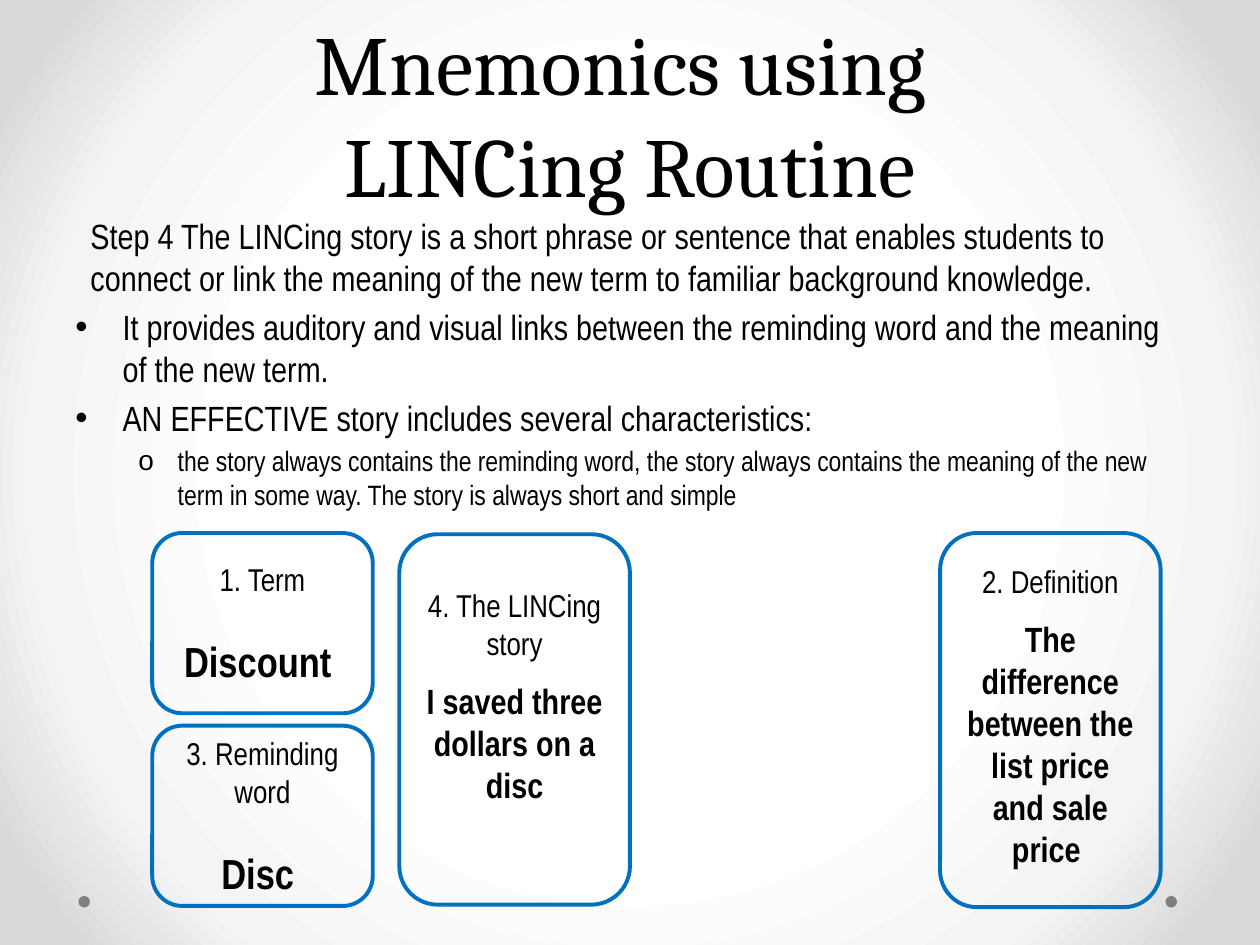
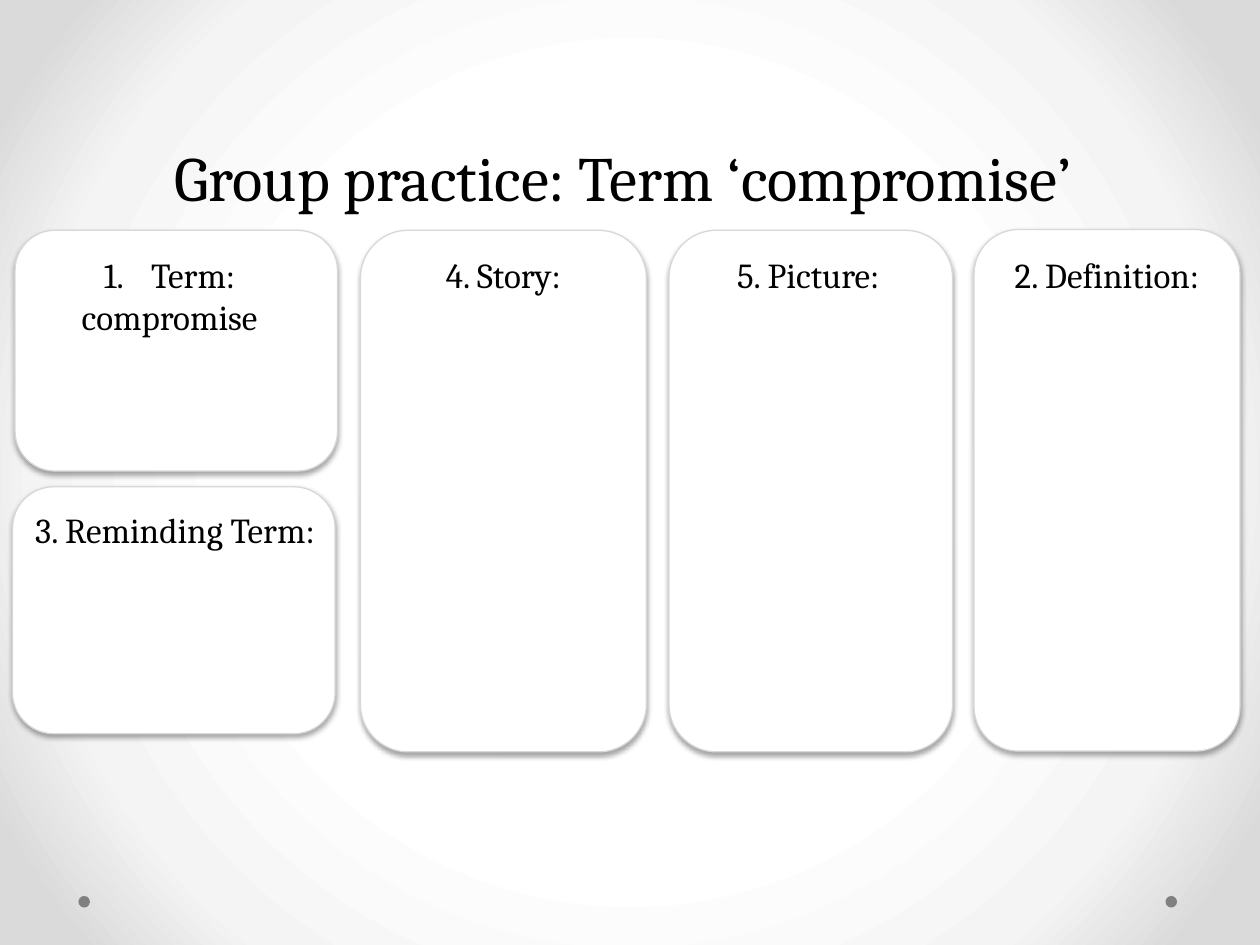
from lxml import etree
from pptx import Presentation
from pptx.dml.color import RGBColor
from pptx.enum import shapes, text
from pptx.oxml import parse_xml
from pptx.oxml.ns import nsdecls, qn
from pptx.util import Pt

# ---- Shared look ----
BLACK = RGBColor(0x00, 0x00, 0x00)
WHITE = RGBColor(0xFF, 0xFF, 0xFF)
BLUE = RGBColor(0x00, 0x70, 0xC0)
PALE = RGBColor(0xD8, 0xD8, 0xD8)
GREY = RGBColor(0x80, 0x80, 0x80)
GLOW = [(50, "FFFFFF"), (76, "F4F4F4"), (92, "DADADA")]
SERIF, NARROW = "Cambria", "Arial Narrow"
DOT = 6.6
DOT_TOP = 512
DOT_LEFTS = (666, 44.8)
TITLE_BOX = (36, 0, 648, 126)

# ---- Slide 1 content ----
ROUTINE_TITLE = ("Mnemonics using \vLINCing Routine", 48)
STORY_BOX = (36, 118.8, 648, 260)
# (text, size, bullet, left margin, hanging indent)
STORY_POINTS = [
    ("Step 4 The LINCing story is a short phrase or sentence that enables students to "
     "connect or link the meaning of the new term to familiar background knowledge.",
     20, None, 8.64, 0),
    ("It provides auditory and visual links between the reminding word and the meaning "
     "of the new term.", 20, "•", 27, -27),
    ("AN EFFECTIVE story includes several characteristics:", 20, "•", 27, -27),
    ("the story always contains the reminding word, the story always contains the meaning "
     "of the new term in some way. The story is always short and simple",
     16, "o", 58.5, -22.5),
]
# (label, example, example size, gap, top inset or None for centred, box)
LINC_CARDS = [
    ("1. Term", "Discount ", 24, 21.7, None, (87, 304.6, 126, 103)),
    ("3. Reminding word", "Disc ", 24, 21.7, None, (87, 414.7, 126, 103)),
    ("2. Definition", "The difference between the list price and sale price ",
     20, 10, 10.4, (537.2, 304.6, 126, 213.8)),
    ("4. The LINCing story", "I saved three dollars on a disc",
     20, 10, 23.4, (228.2, 305.3, 131.8, 211.7)),
]

# ---- Slide 2 content ----
PRACTICE_TITLE = ("Group practice: Term ‘compromise’ ", 36)
# (lines, first line numbered, card box, label box)
PRACTICE_CARDS = [
    (["Term:", "compromise"], True, (8.6, 131.6, 184.3, 137.6), (20.2, 141.1, 153.4, 108)),
    (["3. Reminding Term:"], False, (7.2, 278.2, 184.3, 141.1), (8.6, 287.3, 182.9, 94)),
    (["4. Story:"], False, (206, 131.6, 163.4, 298), (206, 141.1, 163.4, 84)),
    (["5. Picture:"], False, (382.3, 131.6, 162, 298), (394.6, 141.1, 134.6, 32)),
    (["2. Definition:"], False, (556.6, 131.2, 152, 298), (556.6, 141.1, 152, 66)),
]


# ---- Helpers ----
def points(box):
    return [Pt(value) for value in box]


def style(paragraph, font, size, bold=False, align=text.PP_ALIGN.CENTER):
    paragraph.alignment = align
    for run in paragraph.runs:
        run.font.name, run.font.size, run.font.bold = font, Pt(size), bold
        run.font.color.rgb = BLACK


def hang(paragraph, margin, indent, bullet=None, numbered=False):
    props = paragraph._p.get_or_add_pPr()
    props.set("marL", str(Pt(margin)))
    props.set("indent", str(Pt(indent)))
    if bullet:
        etree.SubElement(props, qn("a:buFont"), typeface="Arial")
        etree.SubElement(props, qn("a:buChar"), char=bullet)
    elif numbered:
        etree.SubElement(props, qn("a:buAutoNum"), type="arabicPeriod")


def add_preset(slide, kind, box, fill=None, line=None, width=0.75):
    shape = slide.shapes.add_shape(kind, *points(box))
    shape.shadow.inherit = False
    if fill is None:
        shape.fill.background()
    else:
        shape.fill.solid()
        shape.fill.fore_color.rgb = fill
    if line is None:
        shape.line.fill.background()
    else:
        shape.line.color.rgb = line
        shape.line.width = Pt(width)
    return shape


def add_frame(slide, box, lines):
    frame = slide.shapes.add_textbox(*points(box)).text_frame
    frame.word_wrap = True
    frame.text = "\n".join(lines)
    return frame


def cast_shadow(card):
    effects = card._element.spPr.find(qn("a:effectLst"))
    effects.append(parse_xml(
        f'<a:outerShdw {nsdecls("a")} blurRad="{Pt(3.1)}" dist="{Pt(1.8)}" dir="5400000" '
        'rotWithShape="0"><a:srgbClr val="000000"><a:alpha val="35000"/></a:srgbClr>'
        '</a:outerShdw>'))


def paint_background(master):
    master.background.fill.gradient()
    gradient = master.element.find(".//" + qn("a:gradFill"))
    stops = "".join(f'<a:gs pos="{pos * 1000}"><a:srgbClr val="{colour}"/></a:gs>'
                    for pos, colour in GLOW)
    gradient.getparent().replace(gradient, parse_xml(
        f'<a:gradFill {nsdecls("a")} rotWithShape="1"><a:gsLst>{stops}</a:gsLst>'
        '<a:path path="circle"><a:fillToRect l="50000" t="50000" r="50000" b="50000"/>'
        '</a:path></a:gradFill>'))


def new_slide(prs, title, size):
    slide = prs.slides.add_slide(prs.slide_layouts[6])
    for left in DOT_LEFTS:
        add_preset(slide, shapes.MSO_SHAPE.OVAL, (left, DOT_TOP, DOT, DOT), GREY)
    frame = add_frame(slide, TITLE_BOX, [])
    frame.vertical_anchor = text.MSO_ANCHOR.BOTTOM
    heading = frame.paragraphs[0]
    heading.text = title
    heading.line_spacing = Pt(58)
    style(heading, SERIF, size)
    return slide


# ---- Slides ----
def build_routine(prs):
    slide = new_slide(prs, *ROUTINE_TITLE)
    story = add_frame(slide, STORY_BOX, [point[0] for point in STORY_POINTS])
    for paragraph, (_, size, bullet, margin, indent) in zip(story.paragraphs, STORY_POINTS):
        style(paragraph, NARROW, size, align=text.PP_ALIGN.LEFT)
        paragraph.space_before = Pt(size * 0.2)
        hang(paragraph, margin, indent, bullet)
    story.paragraphs[0].space_before = Pt(0)

    for label, example, size, gap, inset, box in LINC_CARDS:
        card = add_preset(slide, shapes.MSO_SHAPE.ROUNDED_RECTANGLE, box, line=BLUE, width=2.25)
        frame = card.text_frame
        frame.word_wrap = True
        frame.text = f"{label}\n{example}"
        frame.vertical_anchor = text.MSO_ANCHOR.MIDDLE
        if inset is not None:
            frame.vertical_anchor = text.MSO_ANCHOR.TOP
            frame.margin_top = Pt(inset)
        heading, answer = frame.paragraphs
        style(heading, NARROW, 18)
        style(answer, NARROW, size, bold=True)
        answer.space_before = Pt(gap)


def build_practice(prs):
    slide = new_slide(prs, *PRACTICE_TITLE)
    for _, _, box, _ in PRACTICE_CARDS:
        cast_shadow(add_preset(slide, shapes.MSO_SHAPE.ROUNDED_RECTANGLE, box, WHITE, PALE))
    for lines, numbered, _, box in PRACTICE_CARDS:
        label = add_frame(slide, box, lines)
        for paragraph in label.paragraphs:
            style(paragraph, SERIF, 20)
        if numbered:
            hang(label.paragraphs[0], 27, -27, numbered=True)


def main():
    prs = Presentation()
    prs.slide_width, prs.slide_height = Pt(720), Pt(540)
    paint_background(prs.slide_master)
    build_routine(prs)
    build_practice(prs)
    prs.save("out.pptx")


if __name__ == "__main__":
    main()
